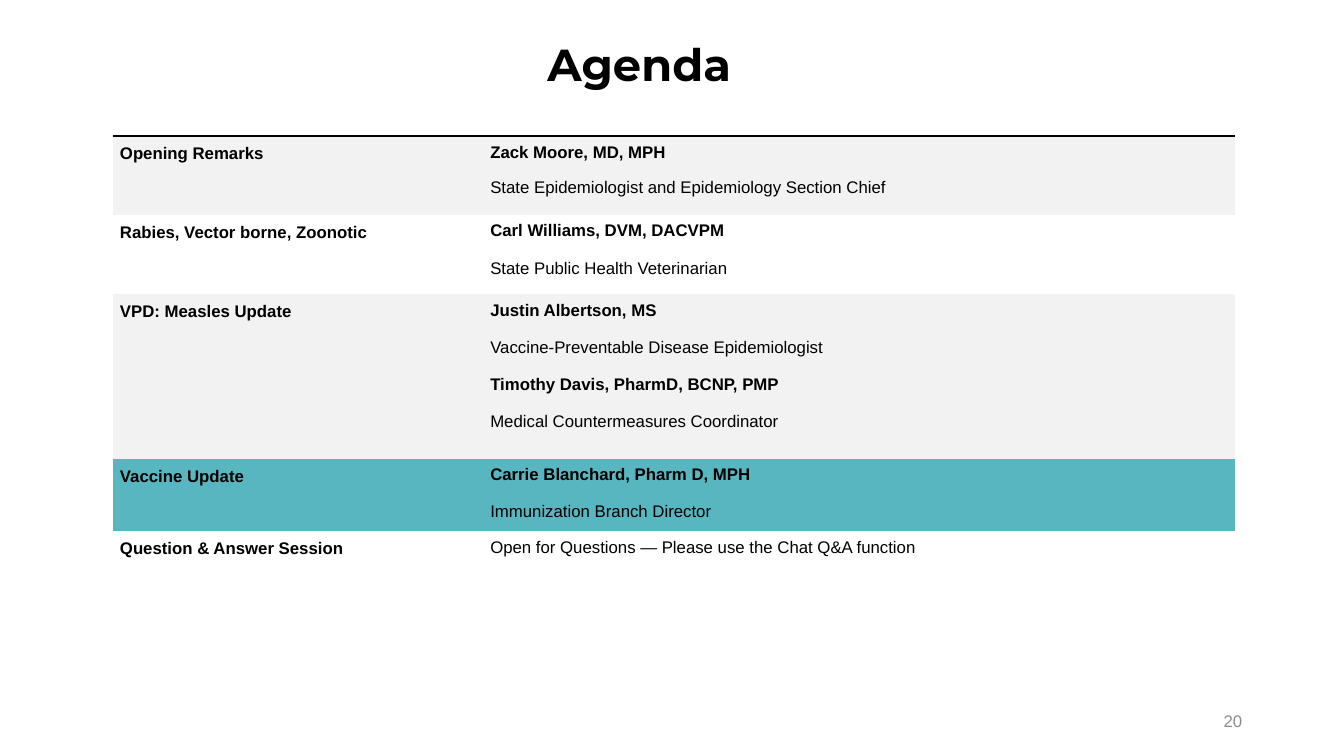
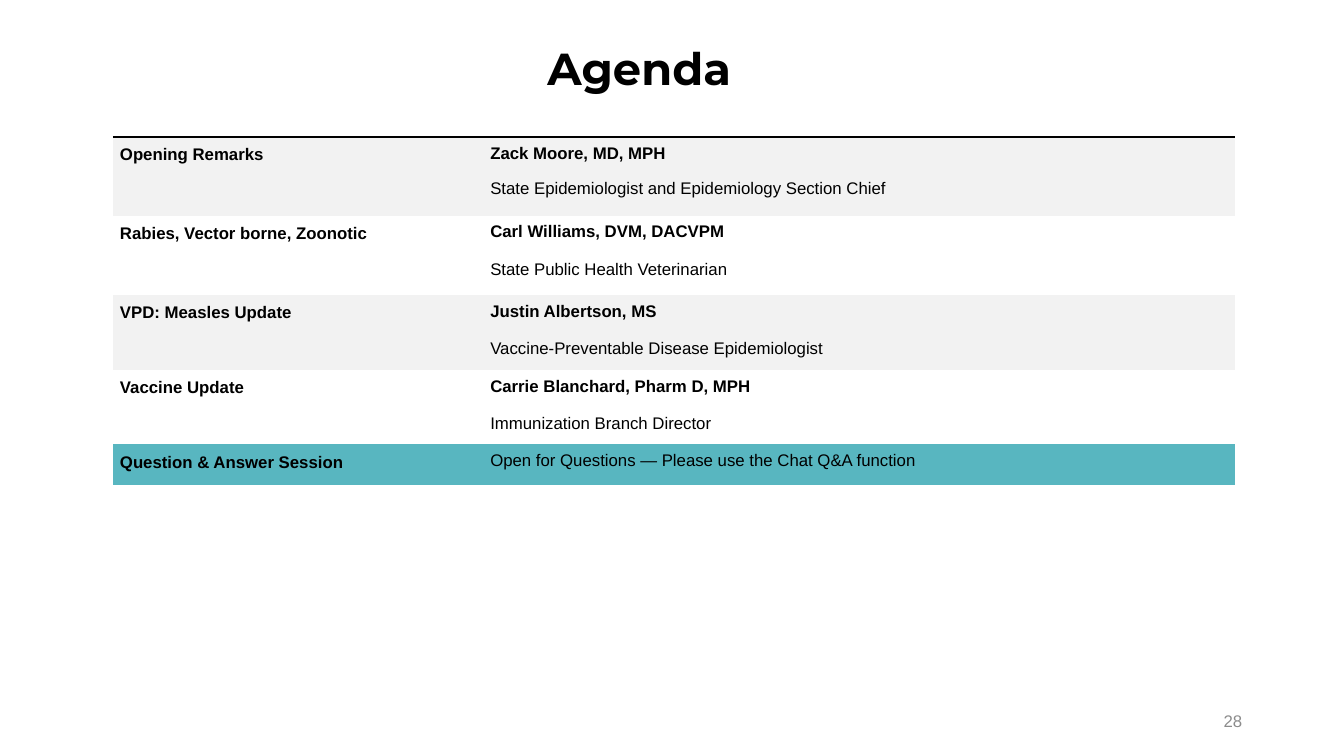
from lxml import etree
from pptx import Presentation
from pptx.dml.color import RGBColor
from pptx.enum import text
from pptx.oxml import ns
from pptx.util import Inches, Pt

W, H = 13.33, 7.5
COLORS = {"ink": "000000", "muted": "8C8C8C", "band": "F2F2F2",
          "plain": "FFFFFF", "current": "58B6C0"}
BODY, HEADING = "Arial", "Montserrat"
NO_STYLE = "{2D5ABB26-0587-4C30-8999-92F81FD0307C}"
COLUMN_SHARES = (0.33, 0.67)
INSET = 0.07

OPENING = ("Opening Remarks", ["Zack Moore, MD, MPH",
                               "State Epidemiologist and Epidemiology Section Chief"])
RABIES = ("Rabies, Vector borne, Zoonotic", ["Carl Williams, DVM, DACVPM",
                                             "State Public Health Veterinarian"])
MEASLES = ("VPD: Measles Update", ["Justin Albertson, MS",
                                   "Vaccine-Preventable Disease Epidemiologist"])
COUNTERMEASURES = ["Timothy Davis, PharmD, BCNP, PMP",
                   "Medical Countermeasures Coordinator"]
VACCINE = ("Vaccine Update", ["Carrie Blanchard, Pharm D, MPH",
                              "Immunization Branch Director"])
QUESTIONS = ("Question & Answer Session",
             ["Open for Questions — Please use the Chat Q&A function"])


def rgb(name):
    return RGBColor.from_string(COLORS[name])


def add_run(p, words, size=12, bold=False, font=BODY, color="ink"):
    r = p.add_run()
    r.text = words
    r.font.size, r.font.bold, r.font.name = Pt(size), bold, font
    r.font.color.rgb = rgb(color)


def add_label(s, box, words, align=text.PP_ALIGN.LEFT,
              anchor=text.MSO_ANCHOR.TOP, **style):
    tf = s.shapes.add_textbox(*map(Inches, box)).text_frame
    tf.word_wrap = True
    tf.vertical_anchor = anchor
    p = tf.paragraphs[0]
    p.alignment = align
    add_run(p, words, **style)


def add_top_rule(cell, width=2.25):
    tc_pr = cell._tc.get_or_add_tcPr()
    line = etree.SubElement(tc_pr, ns.qn("a:lnT"), w=str(Pt(width)))
    fill = etree.SubElement(line, ns.qn("a:solidFill"))
    etree.SubElement(fill, ns.qn("a:srgbClr"), val=COLORS["ink"])


def fill_cell(cell, color):
    cell.margin_left = cell.margin_right = Inches(INSET)
    cell.margin_top = cell.margin_bottom = Inches(INSET)
    cell.fill.solid()
    cell.fill.fore_color.rgb = rgb(color)


def write_topic(cell, topic):
    p = cell.text_frame.paragraphs[0]
    p.line_spacing = 1.07
    add_run(p, topic, bold=True)


def write_speakers(cell, lines, gap):
    tf = cell.text_frame
    for i, words in enumerate(lines):
        p = tf.add_paragraph() if i else tf.paragraphs[0]
        if i:
            p.space_before = Pt(gap)
        add_run(p, words, bold=len(lines) > 1 and i % 2 == 0)


def add_agenda(s, box, items, heights, current):
    left, top, width = box
    frame = s.shapes.add_table(len(items), len(COLUMN_SHARES), Inches(left),
                               Inches(top), Inches(width), Inches(sum(heights)))
    table = frame.table
    table.first_row = table.horz_banding = False
    table._tbl.tblPr.find(ns.qn("a:tableStyleId")).text = NO_STYLE
    for column, share in zip(table.columns, COLUMN_SHARES):
        column.width = Inches(width * share)
    for i, ((topic, lines), height) in enumerate(zip(items, heights)):
        table.rows[i].height = Inches(height)
        striped = i % 2 == 0 and i < len(items) - 1
        color = "current" if i == current else "band" if striped else "plain"
        for cell in table.rows[i].cells:
            if i == 0:
                add_top_rule(cell)
            fill_cell(cell, color)
        write_topic(table.cell(i, 0), topic)
        write_speakers(table.cell(i, 1), lines, 13 if i else 12)


def agenda_slide(prs, number, title_top, table_top, items, heights, current):
    s = prs.slides.add_slide(prs.slide_layouts[6])
    add_label(s, (0.4 * W, title_top, 0.17 * W, 0.64), "Agenda",
              size=32, bold=True, font=HEADING)
    add_agenda(s, (1.12, table_top, 11.13), items, heights, current)
    add_label(s, (9.42, 6.95, 3, 0.4), number, text.PP_ALIGN.RIGHT,
              text.MSO_ANCHOR.MIDDLE, color="muted")


def main():
    prs = Presentation()
    prs.slide_width, prs.slide_height = Inches(W), Inches(H)
    measles_full = (MEASLES[0], MEASLES[1] + COUNTERMEASURES)
    agenda_slide(prs, "20", 0.32, 1.35,
                 [OPENING, RABIES, measles_full, VACCINE, QUESTIONS],
                 [0.78, 0.79, 1.63, 0.72, 0.4], current=3)
    agenda_slide(prs, "28", 0.36, 1.36,
                 [OPENING, RABIES, MEASLES, VACCINE, QUESTIONS],
                 [0.78, 0.79, 0.74, 0.74, 0.4], current=4)
    prs.save("out.pptx")


if __name__ == "__main__":
    main()
